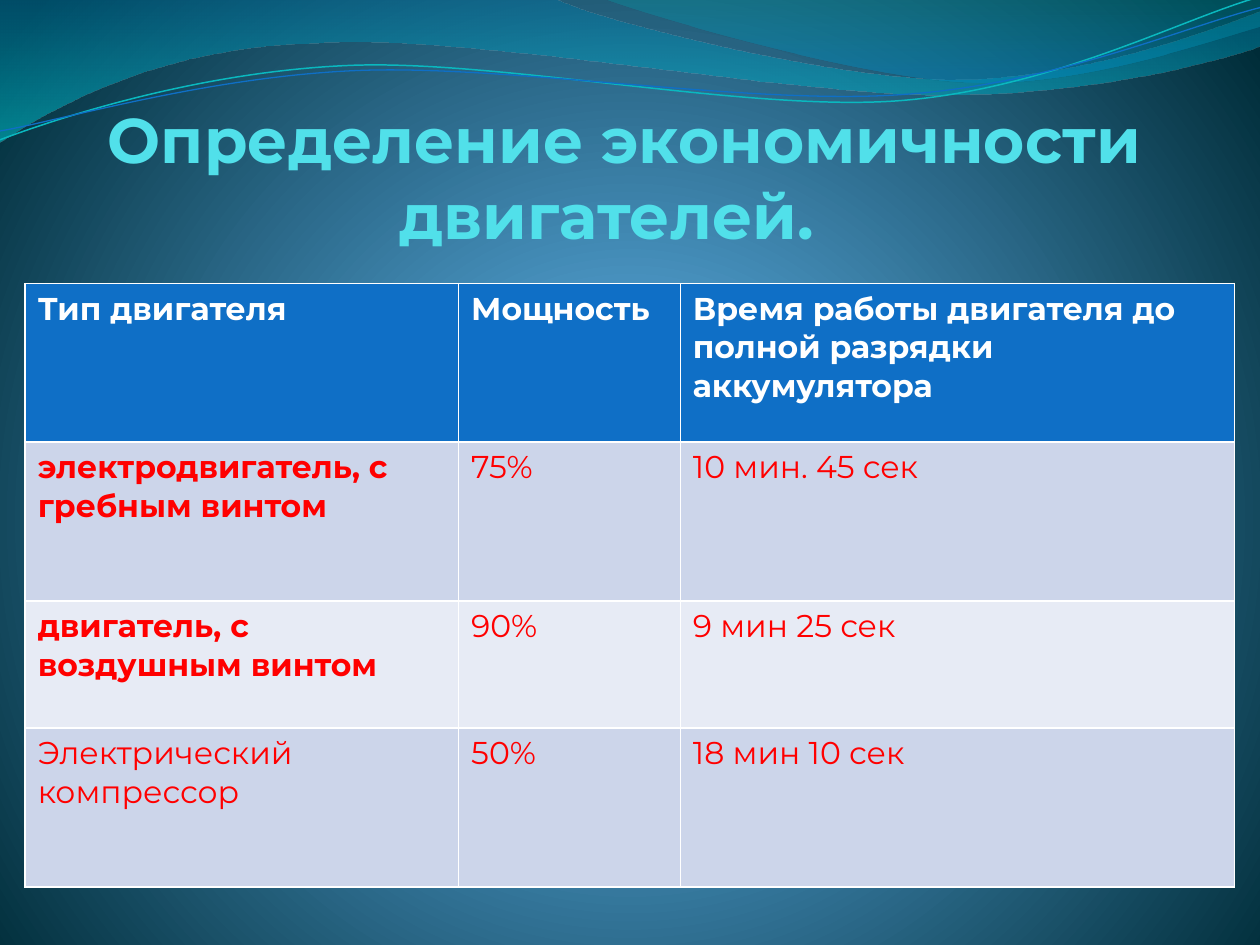
import copy
import math

import pptx
import pptx.dml.color
import pptx.enum.text
import pptx.oxml
import pptx.oxml.ns
import pptx.util
from pptx.util import Inches

FONT = "Montserrat"
qn = pptx.oxml.ns.qn
NS = pptx.oxml.ns.nsdecls("a")


def rgb(hex_color):
    return pptx.dml.color.RGBColor.from_string(hex_color)


def add_run(p, text, size, color, bold=False):
    r = p.add_run()
    r.text = text
    r.font.name = FONT
    r.font.size = pptx.util.Pt(size)
    r.font.bold = bold
    r.font.color.rgb = rgb(color)
    return r


def set_gradient(fill, parent, stops, direction):
    """Stops are (position %, colour, opacity %)."""
    fill.gradient()
    grad = next(parent.iter(qn("a:gradFill")))
    for child in list(grad):
        grad.remove(child)
    items = "".join(
        f'<a:gs pos="{pos * 1000}"><a:srgbClr val="{color}">'
        f'<a:alpha val="{alpha * 1000}"/></a:srgbClr></a:gs>'
        for pos, color, alpha in stops)
    grad.append(pptx.oxml.parse_xml(f"<a:gsLst {NS}>{items}</a:gsLst>"))
    grad.append(pptx.oxml.parse_xml(direction))


def add_curve(s, box, segments, closed, turn=0):
    """Segments hold one point (move, line) or three (cubic curve)."""
    x, y, w, h = box
    builder = s.shapes.build_freeform(Inches(x), Inches(y), scale=1.0)
    builder.add_line_segments(
        [(Inches(x + w), Inches(y)), (Inches(x + w), Inches(y + h))], close=closed)
    sp = builder.convert_to_shape()
    sp.shadow.inherit = False
    sp.rotation = -turn % 360
    cos, sin = math.cos(math.radians(turn)), math.sin(math.radians(turn))

    def point(px, py):
        dx, dy = px - x - w / 2, py - y - h / 2
        return (f'<a:pt x="{Inches(w / 2 + dx * cos - dy * sin)}" '
                f'y="{Inches(h / 2 + dx * sin + dy * cos)}"/>')

    outline = next(sp._element.iter(qn("a:path")))
    for child in list(outline):
        outline.remove(child)
    for i, points in enumerate(segments):
        tag = "moveTo" if i == 0 else "lnTo" if len(points) == 1 else "cubicBezTo"
        body = "".join(point(*pt) for pt in points)
        outline.append(pptx.oxml.parse_xml(f"<a:{tag} {NS}>{body}</a:{tag}>"))
    if closed:
        outline.append(pptx.oxml.parse_xml(f"<a:close {NS}/>"))
    return sp


def add_band(s, box, segments, stops):
    sp = add_curve(s, box, segments, True)
    sp.line.fill.background()
    set_gradient(sp.fill, sp._element, stops, f'<a:lin {NS} ang="5400000" scaled="1"/>')


def add_wave_line(s, box, segments, color, width):
    sp = add_curve(s, box, segments, False, turn=2.7)
    sp.fill.background()
    sp.line.color.rgb = rgb(color)
    sp.line.width = pptx.util.Pt(width)


def add_title(s, text):
    sp = s.shapes.add_textbox(Inches(0.67), Inches(0.6), Inches(8.59), Inches(2))
    tf = sp.text_frame
    tf.word_wrap = True
    tf.vertical_anchor = pptx.enum.text.MSO_ANCHOR.BOTTOM
    tf.margin_left = tf.margin_top = tf.margin_bottom = 0
    tf.margin_right = Inches(0.02)
    p = tf.paragraphs[0]
    p.alignment = pptx.enum.text.PP_ALIGN.CENTER
    r = add_run(p, text, 36, "51E0EA", True)
    # The closing line break keeps the title's own size
    p.add_line_break()
    r_pr = r._r.get_or_add_rPr()
    p._p.find(qn("a:br")).append(copy.deepcopy(r_pr))
    end = pptx.oxml.parse_xml(f'<a:endParaRPr {NS} sz="3600" b="1"/>')
    end.extend(copy.deepcopy(child) for child in r_pr)
    p._p.append(end)


def add_engine_table(s, rows, col_widths, row_heights):
    table = s.shapes.add_table(
        len(rows), len(col_widths), Inches(0.2), Inches(2.25),
        Inches(sum(col_widths)), Inches(sum(row_heights))).table
    for col, width in zip(table.columns, col_widths):
        col.width = Inches(width)
    for row, height in zip(table.rows, row_heights):
        row.height = Inches(height)
    for i, row in enumerate(rows):
        header = i == 0
        fill = "0F6FC6" if header else ("E7EBF5", "CCD5EA")[i % 2]
        for j, text in enumerate(row):
            cell = table.cell(i, j)
            cell.fill.solid()
            cell.fill.fore_color.rgb = rgb(fill)
            bold = header or (j == 0 and i < 3)
            tf = cell.text_frame
            for k, line in enumerate(text.split("\n")):
                p = tf.add_paragraph() if k else tf.paragraphs[0]
                add_run(p, line, 18, "FFFFFF" if header else "FF0000", bold)


def main():
    prs = pptx.Presentation()
    prs.slide_width, prs.slide_height = Inches(10), Inches(7.5)
    s = prs.slides.add_slide(prs.slide_layouts[6])

    # Background glow
    set_gradient(
        s.background.fill, s._element,
        [(0, "4AA0D6", 100), (25, "4C98C7", 100), (100, "002C38", 100)],
        f'<a:path {NS} path="circle"><a:fillToRect l="10000" t="110000" '
        'r="10000" b="100000"/></a:path>')

    # Translucent bands along the top
    add_band(s, (-0.01, -0.01, 10.02, 1.14), [
        [(0, 0)], [(4.4, -0.01)],
        [(4.76, 0.17), (6.64, 0.63), (7.58, 0.63)],
        [(8.53, 0.63), (9.58, 0.26), (10, 0.09)],
        [(10.01, 0.36)],
        [(9.83, 0.44), (8.7, 0.76), (7.46, 0.75)],
        [(6.22, 0.75), (3.82, 0.28), (2.57, 0.34)],
        [(1.29, 0.36), (0.46, 0.83), (-0.01, 1.13)],
        [(0, 0)]], [(0, "0074A1", 45), (100, "00C6CF", 55)])
    add_band(s, (4.79, -0.01, 5.21, 0.7), [
        [(4.79, -0.01)],
        [(5.09, 0.11), (6.82, 0.62), (7.69, 0.65)],
        [(8.56, 0.69), (9.61, 0.32), (10, 0.21)],
        [(10, 0)], [(4.79, -0.01)]], [(0, "00A1A9", 30), (80, "008BBF", 45)])

    # Thin wave lines
    add_wave_line(s, (-0.02, 0.22, 10.02, 0.71), [
        [(0, 1.11)],
        [(0.48, 0.93), (1.58, 0.57), (2.77, 0.52)],
        [(3.95, 0.47), (5.93, 0.89), (7.13, 0.8)],
        [(8.33, 0.71), (9.38, 0.15), (9.98, -0.02)]], "0AB8BF", 0.85)
    add_wave_line(s, (-0.02, 0.3, 10.03, 0.58), [
        [(0, 1.04)],
        [(0.47, 0.96), (1.64, 0.61), (2.83, 0.56)],
        [(4.03, 0.51), (5.97, 0.84), (7.17, 0.75)],
        [(8.36, 0.67), (9.41, 0.21), (10, 0.06)]], "0F6FC6", 0.75)

    # Title and table
    add_title(s, "Определение экономичности двигателей.  ")
    add_engine_table(s, [
        ("Тип двигателя", "Мощность",
         "Время работы двигателя до полной разрядки аккумулятора"),
        ("электродвигатель, с гребным винтом", "75%", "10 мин. 45 сек"),
        ("двигатель, с воздушным винтом", "90%", "9 мин 25 сек"),
        ("Электрический\nкомпрессор", "50%", "18 мин 10 сек"),
    ], [3.44, 1.76, 4.4], [1.26, 1.26, 1.01, 1.26])

    prs.save("out.pptx")


if __name__ == "__main__":
    main()
